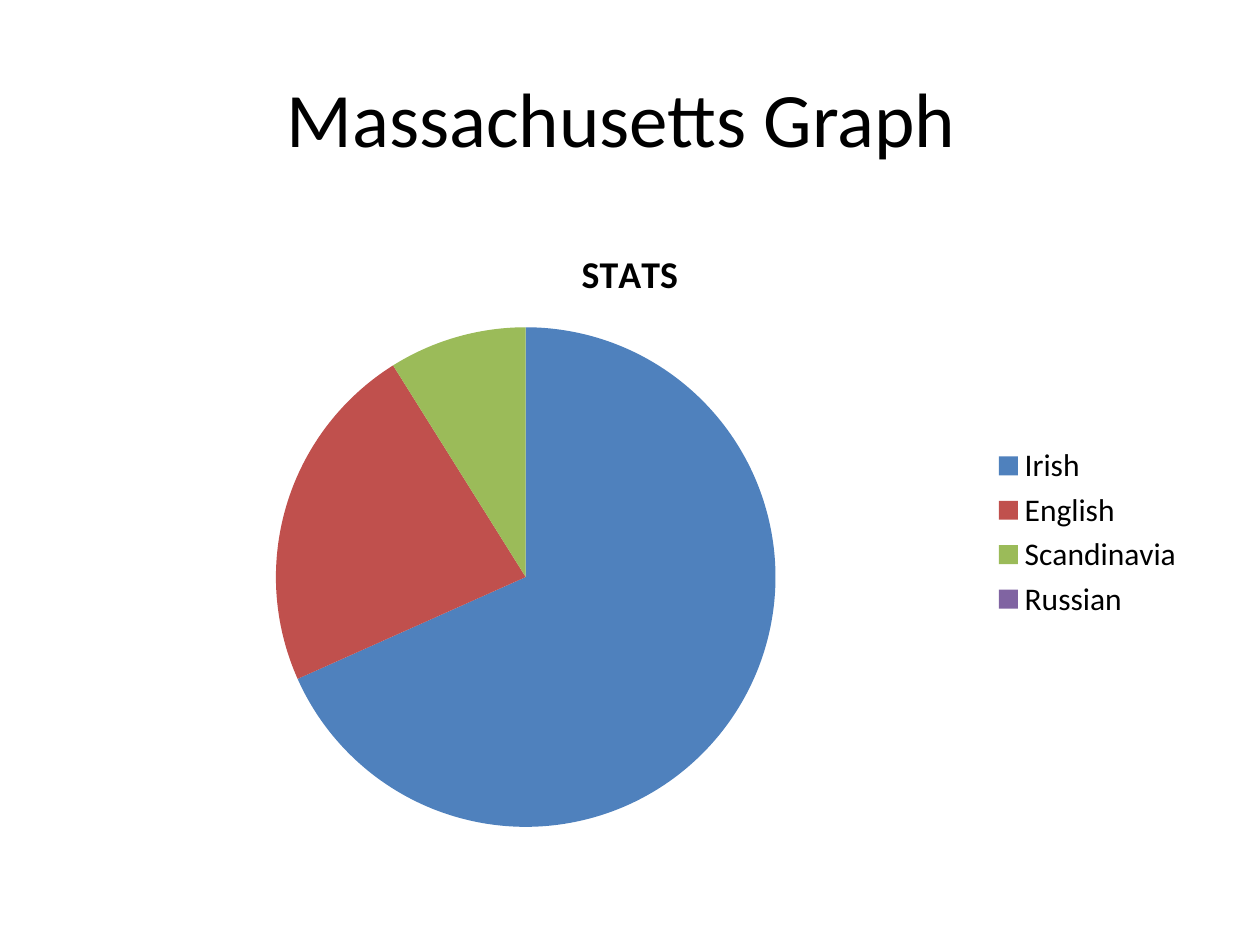
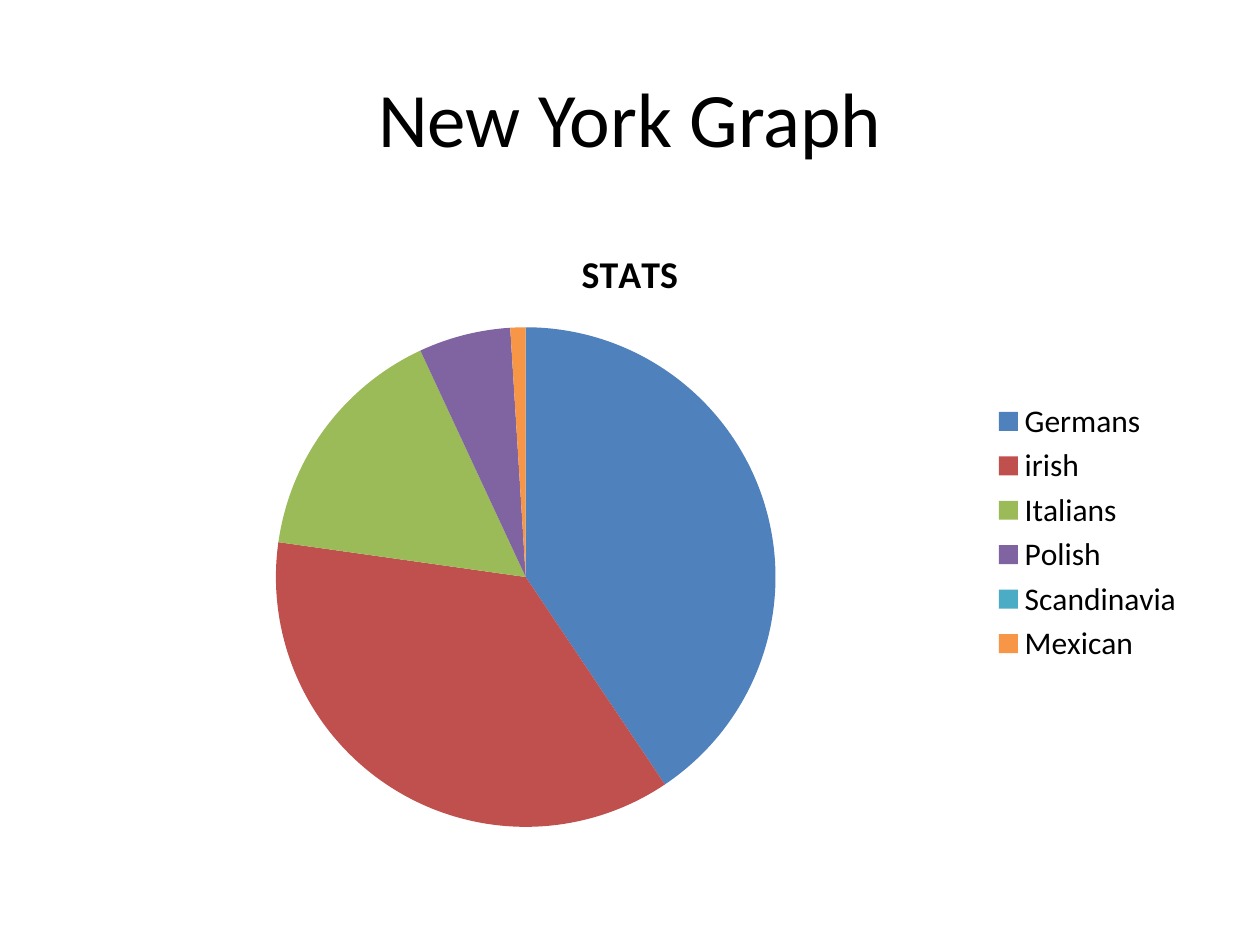
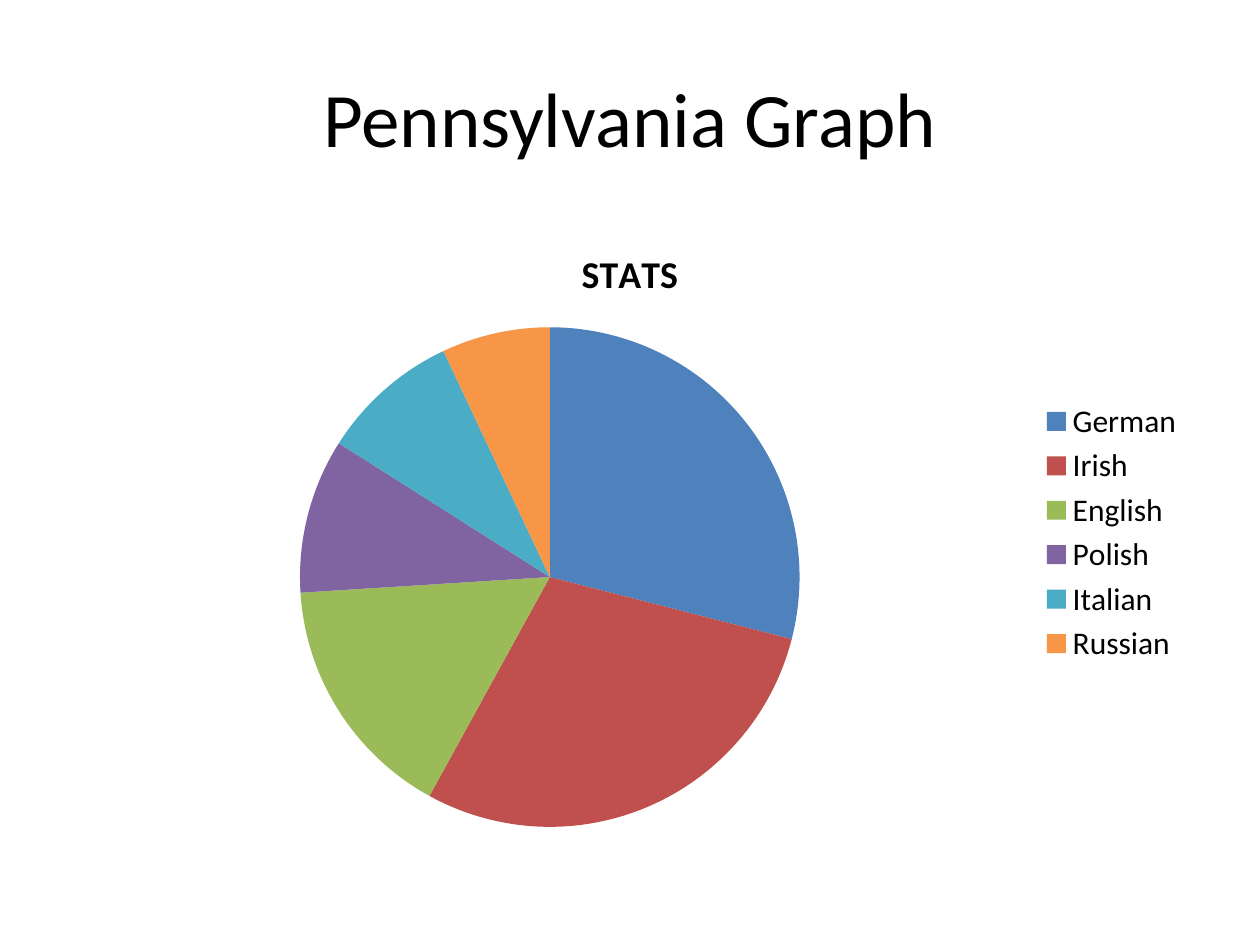
import pptx
import pptx.chart.data
import pptx.dml.color
import pptx.enum.chart
import pptx.enum.text
import pptx.util
from pptx.util import Cm

FONT = "Calibri"
BLACK = "000000"
PALETTE = ["4F81BD", "C0504D", "9BBB59", "8064A2", "4BACC6", "F79646"]
TITLE_BOX = {"left": Cm(1.27), "top": Cm(0.76), "width": Cm(22.86), "height": Cm(3.18)}
CHART_BOX = (Cm(1.27), Cm(4.45), Cm(22.86), Cm(12.57))

STATES = [
    ("Massachusetts Graph ",
     {"Irish": 69, "English": 23, "Scandinavia": 9, "Russian": 0}),
    ("New York Graph",
     {"Germans": 41, "irish": 37, "Italians": 16, "Polish": 6, "Scandinavia": 0, "Mexican": 1}),
    ("Pennsylvania Graph",
     {"German": 29, "Irish": 29, "English": 16, "Polish": 10, "Italian": 9, "Russian": 7}),
]


def rgb(color):
    return pptx.dml.color.RGBColor.from_string(color)


def apply(target, values):
    for name, value in values.items():
        setattr(target, name, value)


def style_font(font, size, bold=False):
    apply(font, {"name": FONT, "size": pptx.util.Pt(size), "bold": bold})
    font.color.rgb = rgb(BLACK)


def add_title(s, text):
    sp = s.shapes.title
    apply(sp, TITLE_BOX)
    tf = sp.text_frame
    tf.vertical_anchor = pptx.enum.text.MSO_ANCHOR.MIDDLE
    p = tf.paragraphs[0]
    p.alignment = pptx.enum.text.PP_ALIGN.CENTER
    r = p.add_run()
    r.text = text
    style_font(r.font, 44)


def add_pie(s, title, shares):
    data = pptx.chart.data.CategoryChartData()
    data.categories = list(shares)
    data.add_series("Series 1", list(shares.values()))
    chart = s.shapes.add_chart(pptx.enum.chart.XL_CHART_TYPE.PIE, *CHART_BOX, data).chart
    style_font(chart.font, 18)

    chart.has_title = True
    tf = chart.chart_title.text_frame
    tf.text = title
    style_font(tf.paragraphs[0].runs[0].font, 21.6, bold=True)

    chart.has_legend = True
    apply(chart.legend, {"position": pptx.enum.chart.XL_LEGEND_POSITION.RIGHT,
                         "include_in_layout": False})

    plot = chart.plots[0]
    plot.vary_by_categories = True
    for i, color in enumerate(PALETTE[:len(shares)]):
        fill = plot.series[0].points[i].format.fill
        fill.solid()
        fill.fore_color.rgb = rgb(color)


def main():
    prs = pptx.Presentation()
    apply(prs, {"slide_width": Cm(25.4), "slide_height": Cm(19.05)})
    for title, shares in STATES:
        s = prs.slides.add_slide(prs.slide_layouts.get_by_name("Title Only"))
        add_title(s, title)
        add_pie(s, "STATS", shares)
    prs.save("out.pptx")


if __name__ == "__main__":
    main()
